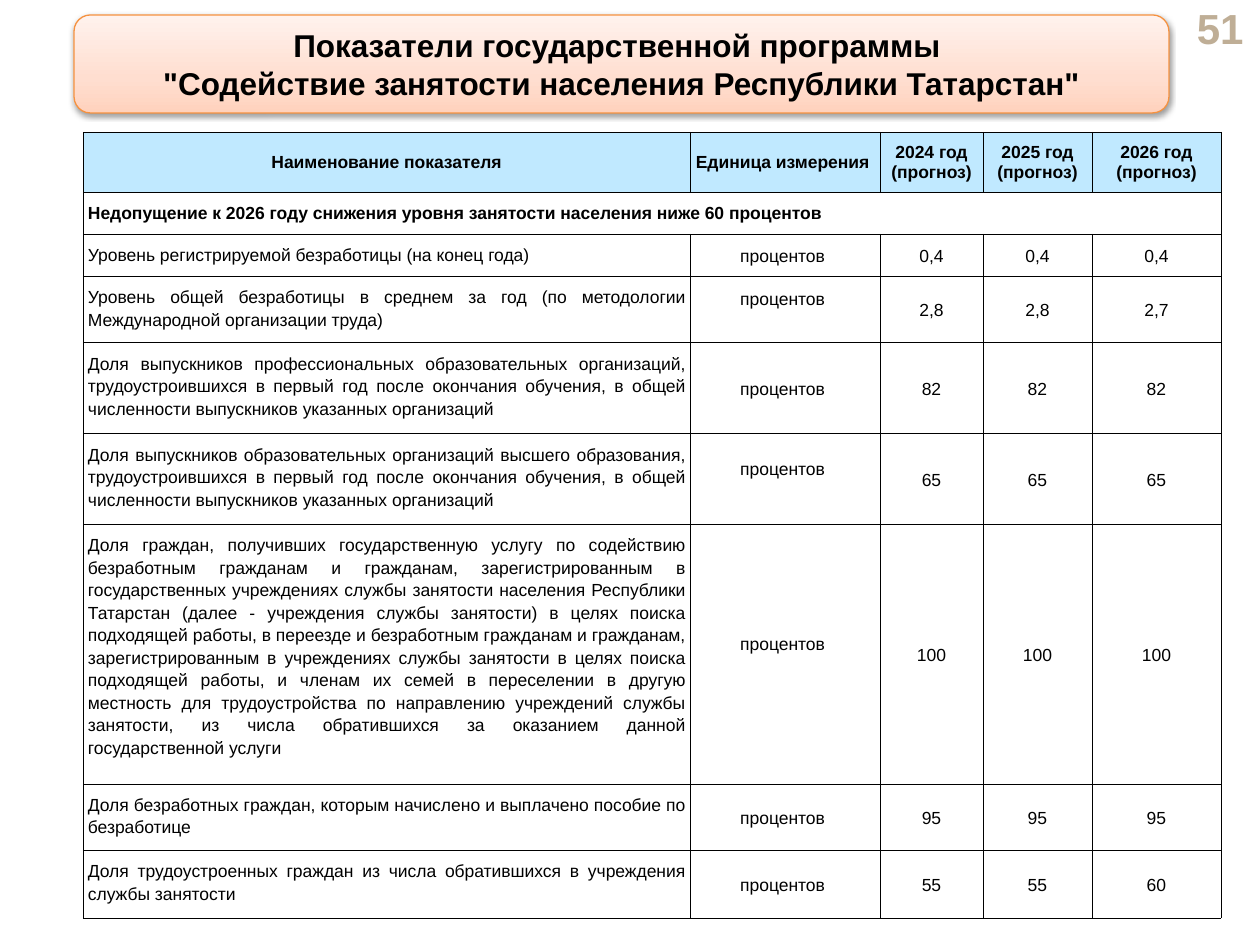
import pptx
import pptx.dml.color
import pptx.enum.shapes
import pptx.enum.text
import pptx.oxml
import pptx.oxml.ns
import pptx.util

PX = 914400 // 126
COLORS = {
    "text": "000000", "page": "BFAE96", "header": "C0E9FF", "grid": "000000",
    "frame": "F69240", "low": "FFD2BD", "middle": "FFDED0", "high": "FFF2ED",
}
NS = pptx.oxml.ns.nsdecls("a")
ALIGN = pptx.enum.text.PP_ALIGN
MIDDLE = pptx.enum.text.MSO_ANCHOR.MIDDLE
TOP = pptx.enum.text.MSO_ANCHOR.TOP


def px(*lengths):
    return [length * PX for length in lengths]


def write(paragraph, text, size, bold, align, color="text"):
    paragraph.alignment = align
    run = paragraph.add_run()
    run.text = text
    run.font.name = "Arial"
    run.font.size = pptx.util.Pt(size)
    run.font.bold = bold
    run.font.color.rgb = pptx.dml.color.RGBColor.from_string(COLORS[color])


deck = pptx.Presentation()
deck.slide_width, deck.slide_height = pptx.util.Inches(10), pptx.util.Inches(7.5)
slide = deck.slides.add_slide(deck.slide_layouts[6])

page_number = slide.shapes.add_textbox(*px(1148, 6, 108, 43)).text_frame
page_number.word_wrap = True
page_number.vertical_anchor = MIDDLE
write(page_number.paragraphs[0], "51", 24, True, ALIGN.RIGHT, "page")

title = slide.shapes.add_shape(
    pptx.enum.shapes.MSO_SHAPE.ROUNDED_RECTANGLE, *px(74, 15, 1095, 98))
title.line.color.rgb = pptx.dml.color.RGBColor.from_string(COLORS["frame"])
title.line.width = pptx.util.Pt(0.75)
stops = "".join(
    f'<a:gs pos="{position}"><a:srgbClr val="{COLORS[tone]}"/></a:gs>'
    for position, tone in [(0, "low"), (35000, "middle"), (100000, "high")])
title.line._ln.addprevious(pptx.oxml.parse_xml(
    f'<a:gradFill {NS} rotWithShape="1"><a:gsLst>{stops}</a:gsLst>'
    '<a:lin ang="16200000" scaled="1"/></a:gradFill>'))
title.line._ln.addnext(pptx.oxml.parse_xml(
    f'<a:effectLst {NS}><a:outerShdw blurRad="40000" dist="20000" dir="5400000" '
    'rotWithShape="0"><a:srgbClr val="000000"><a:alpha val="38000"/></a:srgbClr>'
    '</a:outerShdw></a:effectLst>'))
title_text = title.text_frame
title_text.word_wrap = True
title_text.vertical_anchor = MIDDLE
write(title_text.paragraphs[0], "Показатели государственной программы ",
      18, True, ALIGN.CENTER)
write(title_text.add_paragraph(),
      "\"Содействие занятости населения Республики Татарстан\"",
      18, True, ALIGN.CENTER)

headings = ["Наименование показателя", "Единица измерения "]
headings += [f"{year} год (прогноз)" for year in (2024, 2025, 2026)]
goal = "Недопущение к 2026 году снижения уровня занятости населения ниже 60 процентов"
unit = "процентов "
indicators = [
    ["Уровень регистрируемой безработицы (на конец года)", unit, "0,4", "0,4", "0,4"],
    ["Уровень общей безработицы в среднем за год (по методологии Международной "
     "организации труда)", unit, "2,8", "2,8", "2,7"],
    ["Доля выпускников профессиональных образовательных организаций, "
     "трудоустроившихся в первый год после окончания обучения, в общей численности "
     "выпускников указанных организаций", unit, "82", "82", "82"],
    ["Доля выпускников образовательных организаций высшего образования, "
     "трудоустроившихся в первый год после окончания обучения, в общей численности "
     "выпускников указанных организаций", unit, "65", "65", "65"],
    ["Доля граждан, получивших государственную услугу по содействию безработным "
     "гражданам и гражданам, зарегистрированным в государственных учреждениях службы "
     "занятости населения Республики Татарстан (далее - учреждения службы занятости) "
     "в целях поиска подходящей работы, в переезде и безработным гражданам и "
     "гражданам, зарегистрированным в учреждениях службы занятости в целях поиска "
     "подходящей работы, и членам их семей в переселении в другую местность для "
     "трудоустройства по направлению учреждений службы занятости, из числа "
     "обратившихся за оказанием данной государственной услуги",
     unit, "100", "100", "100"],
    ["Доля безработных граждан, которым начислено и выплачено пособие по безработице",
     unit, "95", "95", "95"],
    ["Доля трудоустроенных граждан из числа обратившихся в учреждения службы занятости",
     unit, "55", "55", "60"],
]
rows = [headings, [goal, "", "", "", ""]] + indicators
column_widths = [607, 190, 103, 109, 129]
row_heights = [60, 42, 42, 66, 91, 90, 259, 66, 68]
raised_units = {3, 5, 6}

table = slide.shapes.add_table(
    len(rows), len(headings),
    *px(83, 132, sum(column_widths), sum(row_heights))).table
table.horz_banding = False
for column, width in zip(table.columns, column_widths):
    column.width = width * PX
for row, height in zip(table.rows, row_heights):
    row.height = height * PX

for r, texts in enumerate(rows):
    for c, text in enumerate(texts):
        cell = table.cell(r, c)
        for side in ("lnL", "lnR", "lnT", "lnB"):
            cell._tc.get_or_add_tcPr().append(pptx.oxml.parse_xml(
                f'<a:{side} {NS} w="3175"><a:solidFill>'
                f'<a:srgbClr val="{COLORS["grid"]}"/></a:solidFill></a:{side}>'))
        if r == 0:
            cell.fill.solid()
            cell.fill.fore_color.rgb = pptx.dml.color.RGBColor.from_string(
                COLORS["header"])
            margins = px(1, 1, 1, 0)
        else:
            cell.fill.background()
            margins = px(5, 9, 5, 31 if c == 1 and r in raised_units else 9)
        (cell.margin_left, cell.margin_top,
         cell.margin_right, cell.margin_bottom) = margins
        cell.vertical_anchor = TOP if c == 0 and r > 0 else MIDDLE
        if text:
            paragraph = cell.text_frame.paragraphs[0]
            paragraph.line_spacing = 1.15 if r > 0 else 1.0
            write(paragraph, text, 10, r < 2,
                  ALIGN.JUSTIFY if c == 0 and r > 0 else ALIGN.CENTER)
table.cell(1, 0).merge(table.cell(1, len(headings) - 1))

deck.save("out.pptx")
